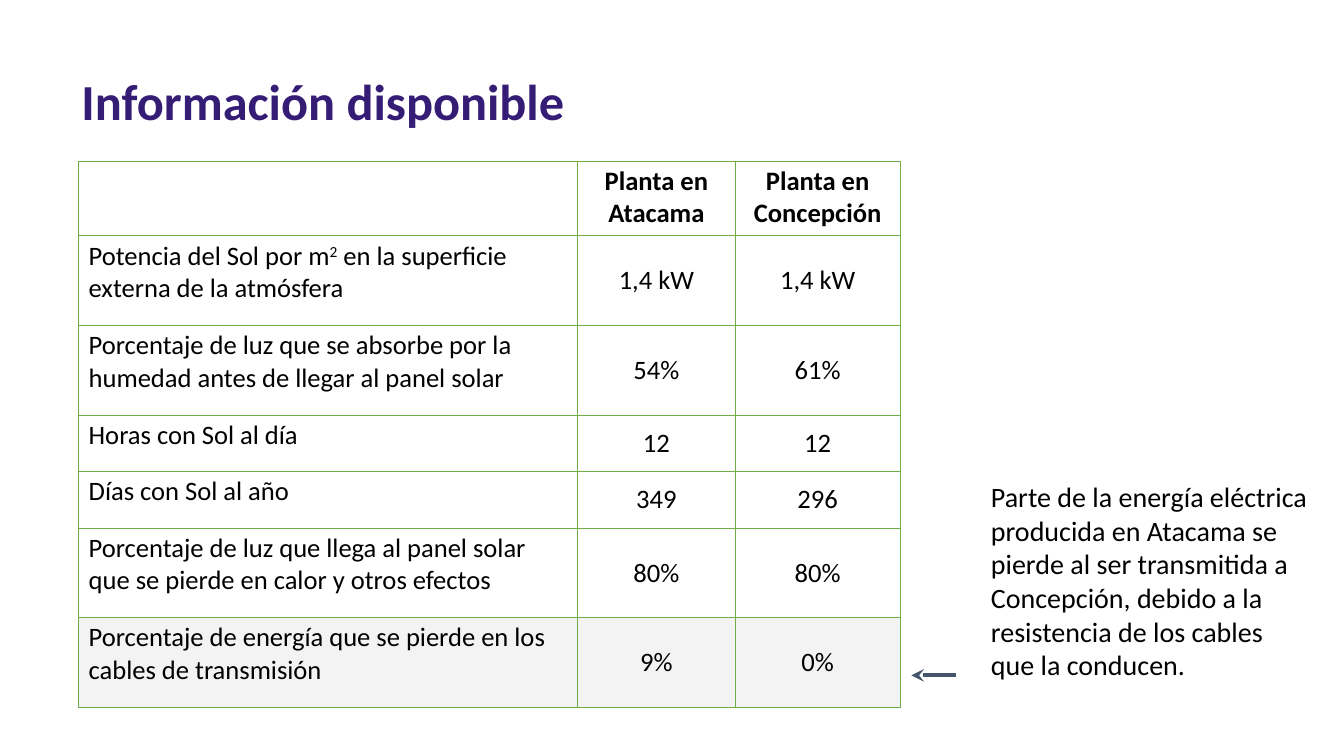
from pptx import Presentation
from pptx import util as u
from pptx.dml import color
from pptx.enum import shapes, text
from pptx.oxml import parse_xml
from pptx.oxml import ns

ROWS = [
    ("", "Planta en Atacama", "Planta en Concepción"),
    ("Potencia del Sol por m^2^ en la superficie externa de la atmósfera", "1,4 kW", "1,4 kW"),
    ("Porcentaje de luz que se absorbe por la humedad antes de llegar al panel solar", "54%", "61%"),
    ("Horas con Sol al día", "12", "12"),
    ("Días con Sol al año", "349", "296"),
    ("Porcentaje de luz que llega al panel solar que se pierde en calor y otros efectos", "80%", "80%"),
    ("Porcentaje de energía que se pierde en los cables de transmisión", "9%", "0%"),
]
COLUMN_WIDTHS = [4.95, 1.56, 1.64]
ROW_HEIGHTS = [0.74, 0.89, 0.89, 0.56, 0.56, 0.89, 0.89]
EXPLANATION = (
    "Parte de la energía eléctrica producida en Atacama se pierde al ser transmitida "
    "a Concepción, debido a la resistencia de los cables que la conducen."
)


def rgb(value):
    return color.RGBColor.from_string(value)


def write(frame, content, size=20, ink="000000", bold=False, align=text.PP_ALIGN.LEFT):
    paragraph = frame.paragraphs[0]
    paragraph.alignment = align
    for index, part in enumerate(content.split("^")):
        run = paragraph.add_run()
        run.text = part
        run.font.name = "Calibri"
        run.font.size = u.Pt(size)
        run.font.bold = bold
        run.font.color.rgb = rgb(ink)
        if index % 2:
            run.font._element.set("baseline", "30000")


class SlideBuilder:
    title_ink = "351C75"
    border = "70AD47"
    highlight = "F3F3F3"
    arrow_ink = "44546A"

    def __init__(self, slide):
        self.slide = slide

    def text_box(self, left, top, width, height, content, **style):
        box = self.slide.shapes.add_textbox(*map(u.Inches, (left, top, width, height)))
        box.text_frame.word_wrap = True
        box.text_frame.auto_size = text.MSO_AUTO_SIZE.SHAPE_TO_FIT_TEXT
        write(box.text_frame, content, **style)

    def cell_borders(self, cell):
        properties = cell._tc.get_or_add_tcPr()
        for side in "LRTB":
            properties.append(parse_xml(
                f'<a:ln{side} {ns.nsdecls("a")} w="{u.Pt(0.75)}"><a:solidFill>'
                f'<a:srgbClr val="{self.border}"/></a:solidFill></a:ln{side}>'
            ))

    def table(self, left, top, rows, widths, heights):
        frame = self.slide.shapes.add_table(
            len(rows), len(widths), u.Inches(left), u.Inches(top),
            u.Inches(sum(widths)), u.Inches(sum(heights)),
        )
        table = frame.table
        table.first_row = table.horz_banding = False
        for column, width in zip(table.columns, widths):
            column.width = u.Inches(width)
        for row, height in zip(table.rows, heights):
            row.height = u.Inches(height)
        for r, values in enumerate(rows):
            for c, value in enumerate(values):
                cell = table.cell(r, c)
                cell.margin_top = cell.margin_bottom = u.Inches(0.04)
                self.cell_borders(cell)
                if r == len(rows) - 1:
                    cell.fill.solid()
                    cell.fill.fore_color.rgb = rgb(self.highlight)
                else:
                    cell.fill.background()
                if r and c:
                    cell.vertical_anchor = text.MSO_ANCHOR.MIDDLE
                align = text.PP_ALIGN.CENTER if c else text.PP_ALIGN.LEFT
                if value:
                    write(cell.text_frame, value, size=19, bold=r == 0, align=align)

    def arrow(self, x1, y1, x2, y2):
        line = self.slide.shapes.add_connector(
            shapes.MSO_CONNECTOR.STRAIGHT, *map(u.Inches, (x1, y1, x2, y2))
        )
        line.line.color.rgb = rgb(self.arrow_ink)
        line.line.width = u.Pt(3)
        line.line._get_or_add_ln().append(
            parse_xml(f'<a:tailEnd {ns.nsdecls("a")} type="stealth"/>')
        )
        line._element.spPr.append(parse_xml(f'<a:effectLst {ns.nsdecls("a")}/>'))


def main():
    presentation = Presentation()
    presentation.slide_width = u.Inches(13.33)
    presentation.slide_height = u.Inches(7.5)
    builder = SlideBuilder(presentation.slides.add_slide(presentation.slide_layouts[6]))
    builder.text_box(0.71, 0.65, 8.59, 0.71, "Información disponible",
                     size=36, ink=builder.title_ink, bold=True)
    builder.table(0.78, 1.6, ROWS, COLUMN_WIDTHS, ROW_HEIGHTS)
    builder.text_box(9.73, 4.71, 3.34, 2.12, EXPLANATION)
    builder.arrow(9.48, 6.7, 9.04, 6.7)
    presentation.save("out.pptx")


if __name__ == "__main__":
    main()
